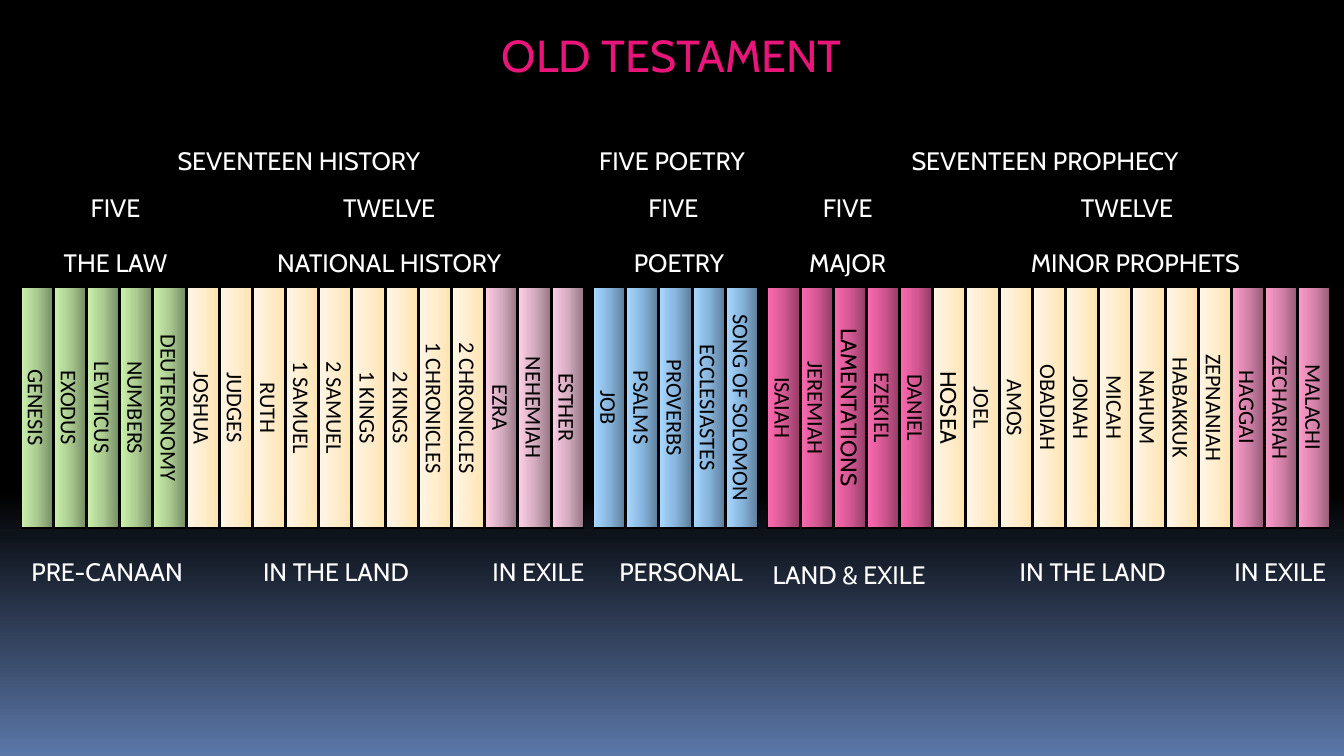
from lxml import etree
from pptx import Presentation
from pptx.dml.color import RGBColor
from pptx.enum import shapes, text
from pptx.oxml.ns import qn
from pptx.util import Pt

# Content: sections of the shelf, each a list of (colour, books)
GREEN = ("788F66", "ABCB91", "CBF1AC")
CREAM = ("FFE4B1", "FFEDCE", "FFF6E7")
MAUVE = ("967987", "D6ADC0", "FECDE4")
BLUE = ("5F7F9B", "87B5DD", "A7D6FF")
ROSE = ("953E68", "D45993", "FC69AF")
PINK = ("965C77", "D583AA", "FD9BC9")
SECTIONS = [
    [(GREEN, ["GENESIS", "EXODUS", "LEVITICUS", "NUMBERS", "DEUTERONOMY"]),
     (CREAM, ["JOSHUA", "JUDGES", "RUTH", "1 SAMUEL", "2 SAMUEL", "1 KINGS",
              "2 KINGS", "1 CHRONICLES", "2 CHRONICLES"]),
     (MAUVE, ["EZRA", "NEHEMIAH", "ESTHER"])],
    [(BLUE, ["JOB", "PSALMS", "PROVERBS", "ECCLESIASTES", "SONG OF SOLOMON"])],
    [(ROSE, ["ISAIAH", "JEREMIAH", "LAMENTATIONS", "EZEKIEL", "DANIEL"]),
     (CREAM, ["HOSEA", "JOEL", "AMOS", "OBADIAH", "JONAH", "MICAH", "NAHUM",
              "HABAKKUK", "ZEPNANIAH"]),
     (PINK, ["HAGGAI", "ZECHARIAH", "MALACHI"])],
]
CABIN_BOOKS = ("LAMENTATIONS", "HOSEA")

# Label rows: top, then (label, left, width)
LABELS = [
    (100, [("SEVENTEEN HISTORY", 21, 385), ("FIVE POETRY", 406, 148),
           ("SEVENTEEN PROPHECY", 554, 385)]),
    (134, [("FIVE", 26.5, 112), ("TWELVE", 144, 268), ("FIVE", 425, 112),
           ("FIVE", 549.5, 112), ("TWELVE", 671, 268)]),
    (173, [("THE LAW", 26.5, 112), ("NATIONAL HISTORY", 144, 268),
           ("POETRY", 429, 112), ("MAJOR", 549.5, 112),
           ("MINOR PROPHETS", 677, 268)]),
    (394, [("PRE-CANAAN", 15, 123), ("IN THE LAND", 139.5, 201),
           ("IN EXILE", 328.5, 112), ("PERSONAL", 430.5, 112),
           ("IN THE LAND", 690, 181), ("IN EXILE", 871, 87)]),
    (396, [("LAND & EXILE", 531.5, 150)]),
]

# Shelf geometry
SHELF_LEFT, SHELF_TOP = 15.1, 205.2
BOOK_W, BOOK_H, PITCH, SECTION_GAP = 22.3, 172, 23.7, 6


def rgb(color):
    return RGBColor.from_string(color)


def set_gradient(fill, element, stops, angle):
    fill.gradient()
    fill.gradient_angle = angle
    gs_list = element.find(".//" + qn("a:gsLst"))
    for gs in list(gs_list):
        gs_list.remove(gs)
    for position, color in stops:
        gs = etree.SubElement(gs_list, qn("a:gs"), pos=str(position * 1000))
        etree.SubElement(gs, qn("a:srgbClr"), val=color)


def write(sp, words, size, color, font="Cabin"):
    tf = sp.text_frame
    tf.word_wrap = True
    p = tf.paragraphs[0]
    p.text = words
    p.alignment = text.PP_ALIGN.CENTER
    p.font.name, p.font.size = font, Pt(size)
    p.font.color.rgb = rgb(color)
    return tf


def add_box(parent, left, top, width, height, line_width):
    sp = parent.add_shape(shapes.MSO_SHAPE.RECTANGLE,
                          Pt(left), Pt(top), Pt(width), Pt(height))
    sp.shadow.inherit = False
    sp.line.color.rgb = rgb("000000")
    sp.line.width = Pt(line_width)
    return sp


def add_book(parent, left, name, colors):
    sp = add_box(parent, left, SHELF_TOP, BOOK_W, BOOK_H, 0.75)
    set_gradient(sp.fill, sp.element, zip((0, 50, 100), colors), 180)
    tf = write(sp, name, 16, "000000",
               "Cabin" if name in CABIN_BOOKS else "Calibri")
    tf.vertical_anchor = text.MSO_ANCHOR.MIDDLE
    tf._txBody.bodyPr.set("vert", "vert")


prs = Presentation()
prs.slide_width, prs.slide_height = Pt(960), Pt(540)
s = prs.slides.add_slide(prs.slide_layouts[6])
set_gradient(s.background.fill, s.element,
             [(0, "000000"), (65, "000000"), (100, "5B77A8")], 270)

# Title
title = add_box(s.shapes, 195, 16.5, 570, 49, 1.5)
title.fill.solid()
title.fill.fore_color.rgb = rgb("000000")
write(title, "OLD TESTAMENT", 32, "EA157A").vertical_anchor = text.MSO_ANCHOR.TOP

# Books, left to right with a gap between sections
shelf = s.shapes.add_group_shape().shapes
left = SHELF_LEFT
for section in SECTIONS:
    for colors, names in section:
        for name in names:
            add_book(shelf, left, name, colors)
            left += PITCH
    left += SECTION_GAP

# Labels above and below the shelf
for top, row in LABELS:
    for label, label_left, width in row:
        sp = s.shapes.add_textbox(Pt(label_left), Pt(top), Pt(width), Pt(29))
        tf = write(sp, label, 18, "FFFFFF")
        tf.auto_size = text.MSO_AUTO_SIZE.SHAPE_TO_FIT_TEXT

prs.save("out.pptx")
